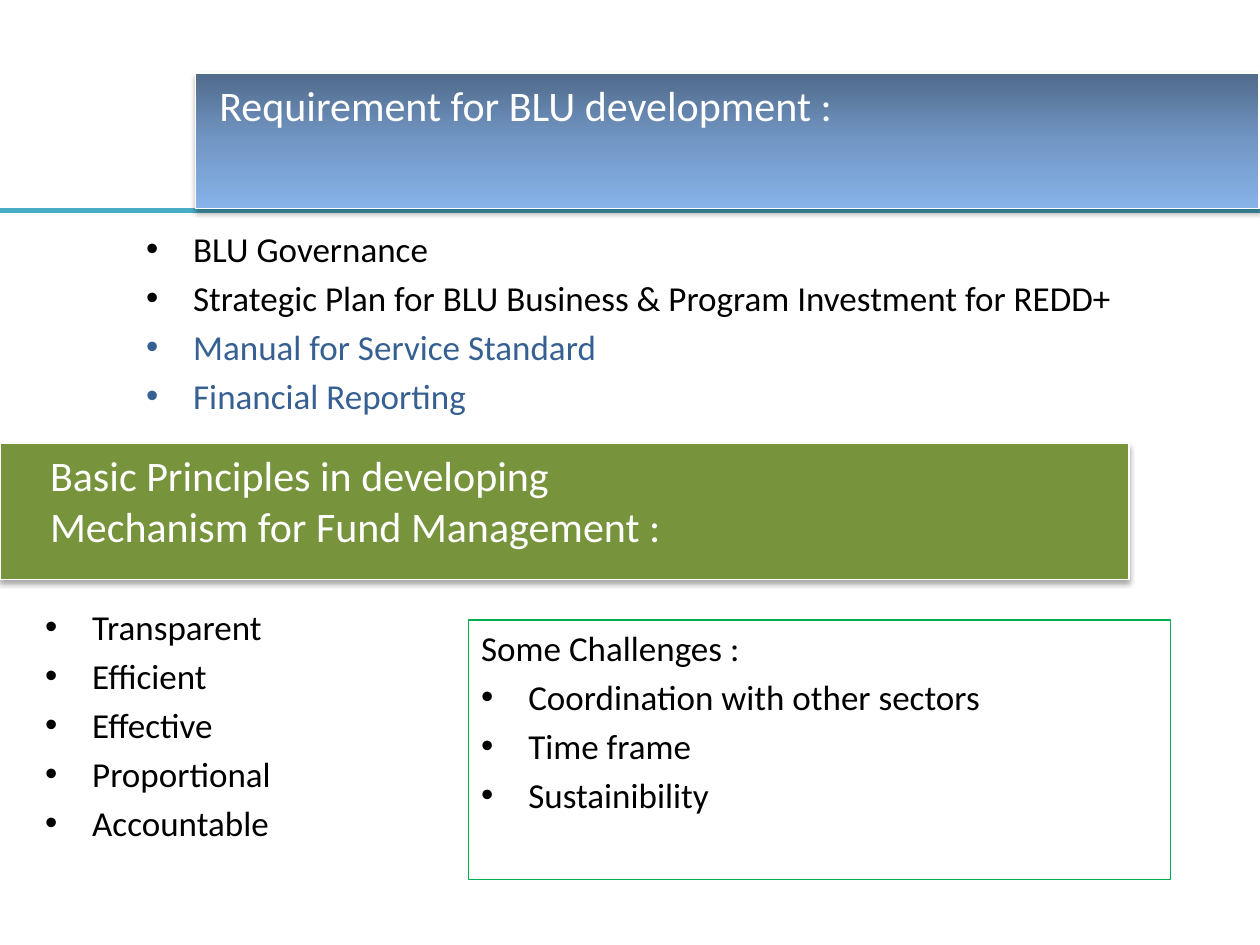
from copy import deepcopy
from dataclasses import dataclass

from lxml import etree
from pptx import Presentation
from pptx.dml.color import RGBColor
from pptx.enum.shapes import MSO_CONNECTOR, MSO_SHAPE
from pptx.enum.text import MSO_ANCHOR, MSO_AUTO_SIZE, PP_ALIGN
from pptx.oxml.ns import qn
from pptx.util import Cm, Pt

RECT, STRAIGHT = MSO_SHAPE.RECTANGLE, MSO_CONNECTOR.STRAIGHT
TOP, LEFT, NO_FIT = MSO_ANCHOR.TOP, PP_ALIGN.LEFT, MSO_AUTO_SIZE.NONE


@dataclass
class Theme:
    font: str = "Calibri"
    heading: int = 24
    body: int = 20
    gap: int = 4
    hairline: float = 0.75
    rule_width: int = 3
    text: str = "000000"
    accent: str = "376092"
    light: str = "FFFFFF"
    rule: str = "4BACC6"
    green: str = "77933C"
    frame: str = "00B050"
    gradient: tuple = ((0, "506A8A"), (0.5, "7297C5"), (1, "87B3E9"))


T = Theme()

REQUIREMENT_TITLE = ["Requirement for BLU development :"]
REQUIREMENTS = [
    ("BLU Governance", T.text),
    ("Strategic Plan for BLU Business & Program Investment for REDD+", T.text),
    ("Manual for Service Standard", T.accent),
    ("Financial Reporting", T.accent),
]
PRINCIPLE_TITLE = ["Basic Principles in developing", "Mechanism for Fund Management :"]
PRINCIPLES = ["Transparent", "Efficient", "Effective", "Proportional", "Accountable"]
CHALLENGE_TITLE = "Some Challenges :"
CHALLENGES = ["Coordination with other sectors", "Time frame", "Sustainibility"]

BANNER_H, LIST_H, RULE_Y = 2.74, 5.23, 4.24
BULLET_INDENT = 0.95


def rgb(value):
    return RGBColor.from_string(value)


def place(sp, left, top, width, height):
    sp.left, sp.top, sp.width, sp.height = map(Cm, (left, top, width, height))


def outline(sp, color, width=T.hairline):
    sp.line.color.rgb = rgb(color)
    sp.line.width = Pt(width)


def add_shadow(sp):
    sp.shadow.inherit = False
    effects = sp._element.spPr.find(qn("a:effectLst"))
    shadow = etree.SubElement(effects, qn("a:outerShdw"), blurRad=str(Pt(3.1)),
                              dist=str(Pt(1.8)), dir="5400000", rotWithShape="0")
    color = etree.SubElement(shadow, qn("a:srgbClr"), val="000000")
    etree.SubElement(color, qn("a:alpha"), val="35000")


def fill_gradient(sp, stops):
    sp.fill.gradient()
    sp.fill.gradient_angle = 270
    gs_list = sp._element.spPr.find(qn("a:gradFill")).find(qn("a:gsLst"))
    gs_list.append(deepcopy(gs_list[0]))
    for stop, (position, color) in zip(sp.fill.gradient_stops, stops):
        stop.position = position
        stop.color.rgb = rgb(color)


def write(sp, lines, size, gap=0):
    tf = sp.text_frame
    tf.word_wrap, tf.auto_size, tf.vertical_anchor = True, NO_FIT, TOP
    for i, (text, color, indent, bulleted) in enumerate(lines):
        p = tf.add_paragraph() if i else tf.paragraphs[0]
        pPr = p._p.get_or_add_pPr()
        pPr.set("marL", str(Cm(indent)))
        pPr.set("indent", str(-Cm(indent) if bulleted else 0))
        if bulleted:
            etree.SubElement(pPr, qn("a:buFont"), typeface="Arial")
            etree.SubElement(pPr, qn("a:buChar"), char="•")
        else:
            etree.SubElement(pPr, qn("a:buNone"))
        p.alignment = LEFT
        p.space_before = Pt(gap if i else 0)
        r = p.add_run()
        r.text = text
        r.font.name, r.font.size = T.font, Pt(size)
        r.font.color.rgb = rgb(color)


def bullets(items, color=T.text):
    return [(text, color, BULLET_INDENT, True) for text in items]


def format_banner(sp, titles, indent):
    outline(sp, T.light)
    add_shadow(sp)
    write(sp, [(text, T.light, indent, False) for text in titles], T.heading)


def main():
    prs = Presentation()
    prs.slide_width, prs.slide_height = Cm(25.4), Cm(19.05)
    s = prs.slides.add_slide(prs.slide_layouts[1])

    rule = s.shapes.add_connector(STRAIGHT, prs.slide_width, Cm(RULE_Y), 0, Cm(RULE_Y))
    outline(rule, T.rule, T.rule_width)
    etree.SubElement(rule._element.spPr, qn("a:effectLst"))
    s.shapes._spTree.insert(2, rule._element)

    title = s.shapes.title
    place(title, 3.94, 1.47, 21.44, BANNER_H)
    fill_gradient(title, T.gradient)
    format_banner(title, REQUIREMENT_TITLE, 0.23)

    body = s.placeholders[1]
    place(body, 2.69, 4.45, 21.44, LIST_H)
    requirements = [(text, color, BULLET_INDENT, True) for text, color in REQUIREMENTS]
    write(body, requirements, T.body, T.gap)

    banner = s.shapes.add_shape(RECT, 0, Cm(8.94), Cm(22.76), Cm(BANNER_H))
    banner.fill.solid()
    banner.fill.fore_color.rgb = rgb(T.green)
    format_banner(banner, PRINCIPLE_TITLE, 0.76)

    principles = s.shapes.add_textbox(Cm(0.66), Cm(12.09), Cm(9.09), Cm(LIST_H))
    write(principles, bullets(PRINCIPLES), T.body, T.gap)

    challenges = s.shapes.add_shape(RECT, Cm(9.45), Cm(12.5), Cm(14.15), Cm(LIST_H))
    challenges.fill.background()
    challenges.shadow.inherit = False
    outline(challenges, T.frame)
    heading = [(CHALLENGE_TITLE, T.text, 0, False)]
    write(challenges, heading + bullets(CHALLENGES), T.body, T.gap)

    prs.save("out.pptx")


if __name__ == "__main__":
    main()
